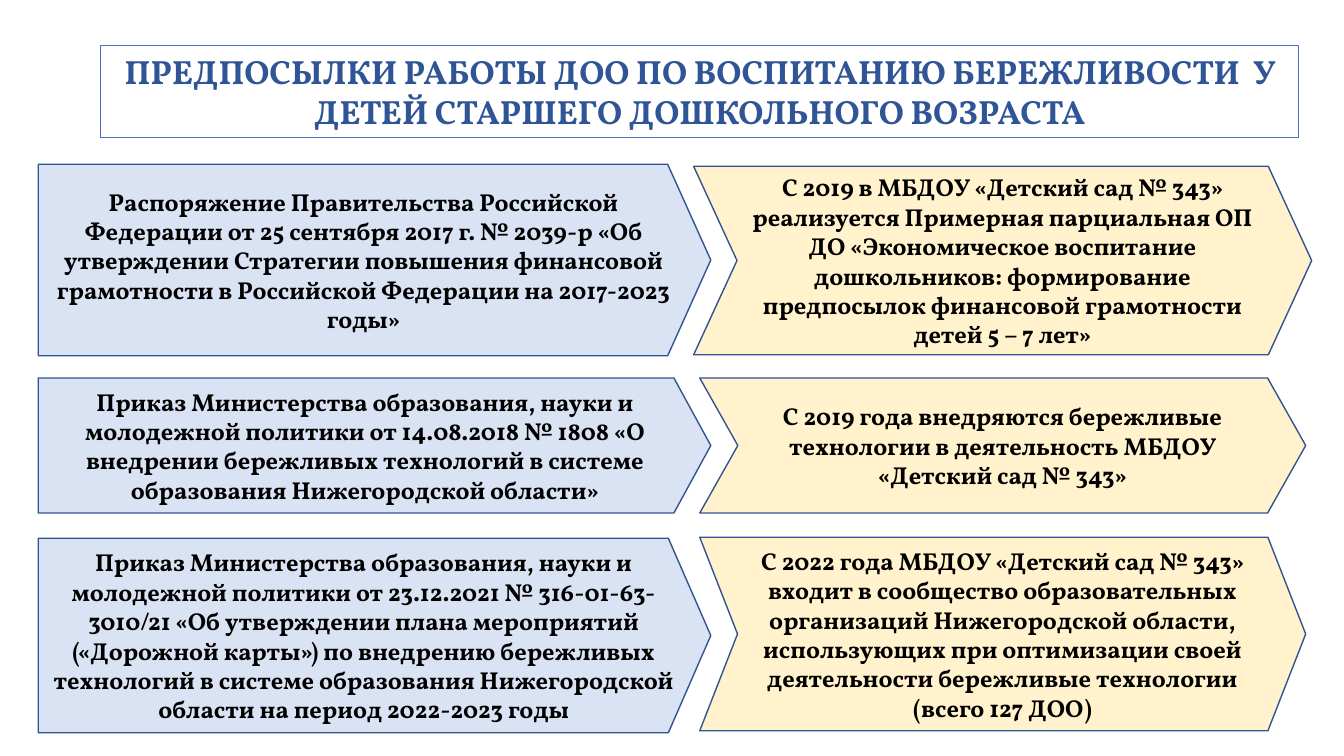
"""Build the slide on the background of thrift education in a kindergarten."""
from pptx import Presentation
from pptx.dml.color import RGBColor
from pptx.enum.shapes import MSO_SHAPE
from pptx.enum.text import MSO_ANCHOR, MSO_AUTO_SIZE, PP_ALIGN
from pptx.util import Emu, Pt

PENTAGON = MSO_SHAPE.PENTAGON
CHEVRON = MSO_SHAPE.CHEVRON
TOP = MSO_ANCHOR.TOP
MIDDLE = MSO_ANCHOR.MIDDLE
CENTER = PP_ALIGN.CENTER
NO_AUTOFIT = MSO_AUTO_SIZE.NONE

EMU_PER_PX = 9144
FONT = "Vollkorn"
TITLE_ONLY_LAYOUT = 5

TITLE = ("ПРЕДПОСЫЛКИ РАБОТЫ ДОО ПО ВОСПИТАНИЮ БЕРЕЖЛИВОСТИ  У "
         "ДЕТЕЙ СТАРШЕГО ДОШКОЛЬНОГО ВОЗРАСТА")

DOCUMENTS = [
    ((38, 163, 667, 190), 0.225,
     "Распоряжение Правительства Российской Федерации от 25 сентября 2017 г. "
     "№ 2039-р «Об утверждении Стратегии повышения финансовой грамотности "
     "в Российской Федерации на 2017-2023 годы»"),
    ((38, 375, 667, 134), 0.273,
     "Приказ Министерства образования, науки и молодежной политики "
     "от 14.08.2018 № 1808 «О внедрении бережливых технологий в системе "
     "образования Нижегородской области»"),
    ((38, 534, 667, 193), 0.218,
     "Приказ Министерства образования, науки и молодежной политики "
     "от 23.12.2021 № 316-01-63-3010/21 «Об утверждении плана мероприятий "
     "(«Дорожной карты») по внедрению бережливых технологий в системе "
     "образования Нижегородской области на период 2022-2023 годы"),
]

RESULTS = [
    ((688, 165, 613, 187), 0.23,
     "С 2019 в МБДОУ «Детский сад № 343» реализуется Примерная парциальная "
     "ОП ДО «Экономическое воспитание дошкольников: формирование предпосылок "
     "финансовой грамотности детей 5 – 7 лет»"),
    ((694, 375, 601, 134), 0.282,
     "С 2019 года внедряются бережливые технологии в деятельность МБДОУ "
     "«Детский сад № 343»"),
    ((694, 533, 601, 192), 0.195,
     "С 2022 года МБДОУ «Детский сад № 343» входит в сообщество "
     "образовательных организаций Нижегородской области, использующих при "
     "оптимизации своей деятельности бережливые технологии (всего 127 ДОО)"),
]


def px(length):
    """Turn a length in px into EMU."""
    return Emu(length * EMU_PER_PX)


def color(hex_string):
    """Turn a hex string into a colour."""
    return RGBColor.from_string(hex_string)


def paint(shape, fill, line, line_width):
    """Set the fill and outline of a shape."""
    shape.fill.solid()
    shape.fill.fore_color.rgb = color(fill)
    shape.line.color.rgb = color(line)
    shape.line.width = Pt(line_width)


def write(shape, text, size, font_color, anchor):
    """Put centred bold text into a shape."""
    frame = shape.text_frame
    frame.text = text
    frame.word_wrap = True
    frame.auto_size = NO_AUTOFIT
    frame.vertical_anchor = anchor
    paragraph = frame.paragraphs[0]
    paragraph.alignment = CENTER
    font = paragraph.runs[0].font
    font.name = FONT
    font.size = Pt(size)
    font.bold = True
    font.color.rgb = color(font_color)


def add_title(slide):
    """Place and format the framed title."""
    title = slide.shapes.title
    title.left, title.top, title.width, title.height = map(px, (100, 45, 1188, 91))
    paint(title, "FFFFFF", "4472C4", 0.75)
    write(title, TITLE, 24, "2F5597", TOP)


def add_arrow(slide, kind, box, point, text, fill):
    """Add an arrow-shaped block with its text."""
    arrow = slide.shapes.add_shape(kind, *map(px, box))
    arrow.adjustments[0] = point
    arrow.shadow.inherit = False
    paint(arrow, fill, "325491", 1)
    write(arrow, text, 17.5, "000000", MIDDLE)


def main():
    """Build and save the presentation."""
    presentation = Presentation()
    presentation.slide_width = px(1333)
    presentation.slide_height = px(750)
    layout = presentation.slide_layouts[TITLE_ONLY_LAYOUT]
    slide = presentation.slides.add_slide(layout)
    add_title(slide)
    for document, result in zip(DOCUMENTS, RESULTS):
        add_arrow(slide, PENTAGON, *document, "DAE3F3")
        add_arrow(slide, CHEVRON, *result, "FFF2CC")
    presentation.save("out.pptx")


if __name__ == "__main__":
    main()
